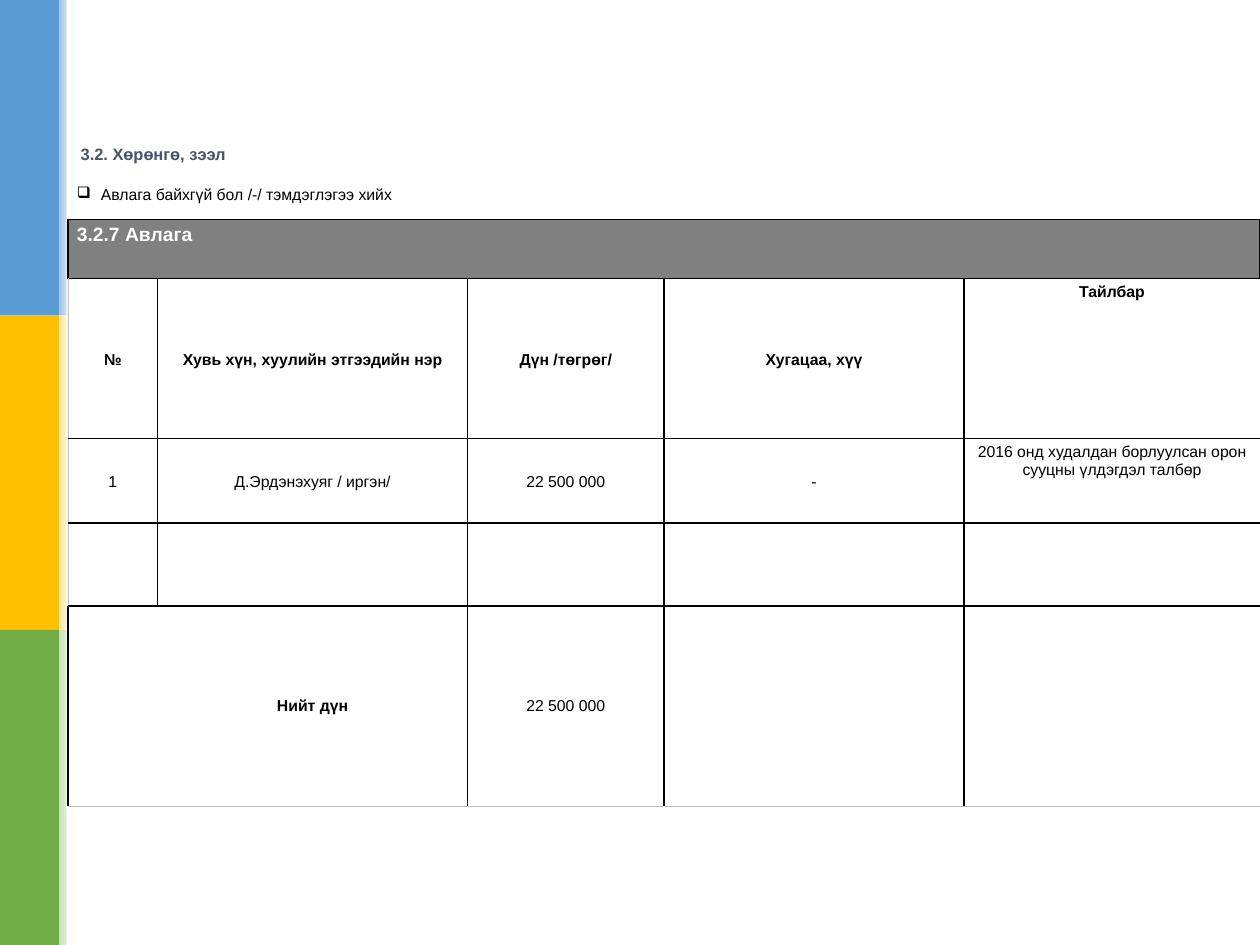
from lxml import etree
from pptx import Presentation
from pptx.dml.color import RGBColor
from pptx.enum.shapes import MSO_CONNECTOR, MSO_SHAPE
from pptx.enum.text import MSO_ANCHOR, PP_ALIGN
from pptx.oxml.ns import qn
from pptx.util import Inches, Pt

RECT = MSO_SHAPE.RECTANGLE
LINE = MSO_CONNECTOR.STRAIGHT
TOP, MID = MSO_ANCHOR.TOP, MSO_ANCHOR.MIDDLE
LEFT, CENTER = PP_ALIGN.LEFT, PP_ALIGN.CENTER
FONT = "Arial"
BLACK, WHITE, EDGE = "000000", "FFFFFF", "BFBFBF"

# Content
TITLE = "3.2. Хөрөнгө, зээл"
NOTE = "Авлага байхгүй бол /-/ тэмдэглэгээ хийх"
HEAD = "3.2.7 Авлага"
ROWS = [
    [NOTE, "", "", "", ""],
    [HEAD, "", "", "", ""],
    ["№", "Хувь хүн, хуулийн этгээдийн нэр", "Дүн /төгрөг/", "Хугацаа, хүү", "Тайлбар"],
    ["1", "Д.Эрдэнэхуяг / иргэн/", "22 500 000", "-",
     "2016 онд худалдан борлуулсан орон сууцны үлдэгдэл талбөр"],
    ["", "", "", "", ""],
    ["", "Нийт дүн", "22 500 000", "", ""],
]
WIDTHS = [0.71, 2.46, 1.56, 2.38, 2.35]
HEIGHTS = [0.3, 0.47, 1.27, 0.67, 0.66, 1.59]
BANDS = [("5B9BD5", "9DC3E6"), ("FFC000", "FFE699"), ("70AD47", "C5E0B4")]
LAST, END = len(ROWS) - 1, len(WIDTHS) - 1
X, Y = 0.54, 1.44


def rgb(code):
    return RGBColor.from_string(code)


def add_bar(x, y, w, h, color, fade=None):
    bar = slide.shapes.add_shape(RECT, Inches(x), Inches(y), Inches(w), Inches(h))
    bar.shadow.inherit = False
    bar.line.fill.background()
    if fade:
        bar.fill.gradient()
        bar.fill.gradient_angle = 0
        for stop, code in zip(bar.fill.gradient_stops, (color, fade)):
            stop.color.rgb = rgb(code)
    else:
        bar.fill.solid()
        bar.fill.fore_color.rgb = rgb(color)


def style(par, size, color, bold=False):
    for run in par.runs:
        font = run.font
        font.name, font.size, font.bold = FONT, Pt(size), bold
        font.color.rgb = rgb(color)


def set_inset(box, side, end):
    box.margin_left = box.margin_right = Inches(side)
    box.margin_top = box.margin_bottom = Inches(end)


def find_edges(r, c):
    """Line colour of the left, right, top and bottom side; None is no line."""
    if r == 0:
        return None, None, None, BLACK
    outer = EDGE if r > 1 else BLACK
    left = outer if c == 0 else BLACK
    right = outer if c == END else BLACK
    if r == LAST:
        left = None if c == 1 else left
        right = None if c == 0 else right
    return left, right, BLACK, EDGE if r == LAST else BLACK


def set_edges(cell, colors):
    props = cell._tc.get_or_add_tcPr()
    for i, (side, color) in enumerate(zip("LRTB", colors)):
        width = Pt(0.5) if color == EDGE else Pt(1)
        edge = etree.Element(qn("a:ln" + side), w=str(width))
        if color:
            fill = etree.SubElement(edge, qn("a:solidFill"))
            etree.SubElement(fill, qn("a:srgbClr"), val=color)
        else:
            etree.SubElement(edge, qn("a:noFill"))
        props.insert(i, edge)


def set_cell(r, c, text):
    cell = table.cell(r, c)
    if r == 0:
        cell.fill.background()
    else:
        cell.fill.solid()
        cell.fill.fore_color.rgb = rgb("808080" if r == 1 else WHITE)
    set_edges(cell, find_edges(r, c))
    if not text:
        return
    high = r < 2 or c == END
    cell.vertical_anchor = TOP if high else MID
    set_inset(cell, *((0.07, 0.04) if high else (0.06, 0)))
    cell.text_frame.text = text
    par = cell.text_frame.paragraphs[0]
    par.alignment = LEFT if r < 2 else CENTER
    if not high and r < LAST:
        par.line_spacing = 1.15
    bold = r in (1, 2) or (r == LAST and c == 1)
    style(par, 11 if r == 1 else 9, WHITE if r == 1 else BLACK, bold)


deck = Presentation()
deck.slide_width, deck.slide_height = Inches(10), Inches(7.5)
slide = deck.slides.add_slide(deck.slide_layouts[5])

# Side bands
for i, (color, tint) in enumerate(BANDS):
    add_bar(0, 2.5 * i, 0.47, 2.5, color)
    add_bar(0.47, 2.5 * i, 0.12, 2.5, tint, WHITE)
add_bar(0.53, 0, 0.04, 7.5, WHITE)

# Title
title = slide.shapes.title
title.left, title.top = Inches(X), Inches(1.12)
title.width, title.height = Inches(6.15), Inches(0.31)
frame = title.text_frame
frame.text = TITLE
frame.vertical_anchor = TOP
set_inset(frame, 0.1, 0.02)
frame.paragraphs[0].alignment = LEFT
style(frame.paragraphs[0], 9.4, "44546A", True)

# Table
table = slide.shapes.add_table(
    len(ROWS), len(WIDTHS), Inches(X), Inches(Y),
    Inches(sum(WIDTHS)), Inches(sum(HEIGHTS))).table
table.first_row = table.horz_banding = False
for col, width in zip(table.columns, WIDTHS):
    col.width = Inches(width)
for row, height in zip(table.rows, HEIGHTS):
    row.height = Inches(height)
for r, texts in enumerate(ROWS):
    for c, text in enumerate(texts):
        set_cell(r, c, text)
for r in (0, 1):
    table.cell(r, 0).merge(table.cell(r, END))

# Bullet of the note
props = table.cell(0, 0).text_frame.paragraphs[0]._p.get_or_add_pPr()
props.set("marL", str(Inches(0.19)))
props.set("indent", str(-Inches(0.19)))
etree.SubElement(props, qn("a:buChar"), char="❑")

# Left side of the total row
top = Y + sum(HEIGHTS[:LAST])
rule = slide.shapes.add_connector(
    LINE, Inches(X), Inches(top), Inches(X), Inches(top + HEIGHTS[LAST]))
rule.line.color.rgb = rgb(BLACK)
rule.line.width = Pt(1)
etree.SubElement(rule._element.spPr, qn("a:effectLst"))

deck.save("out.pptx")
